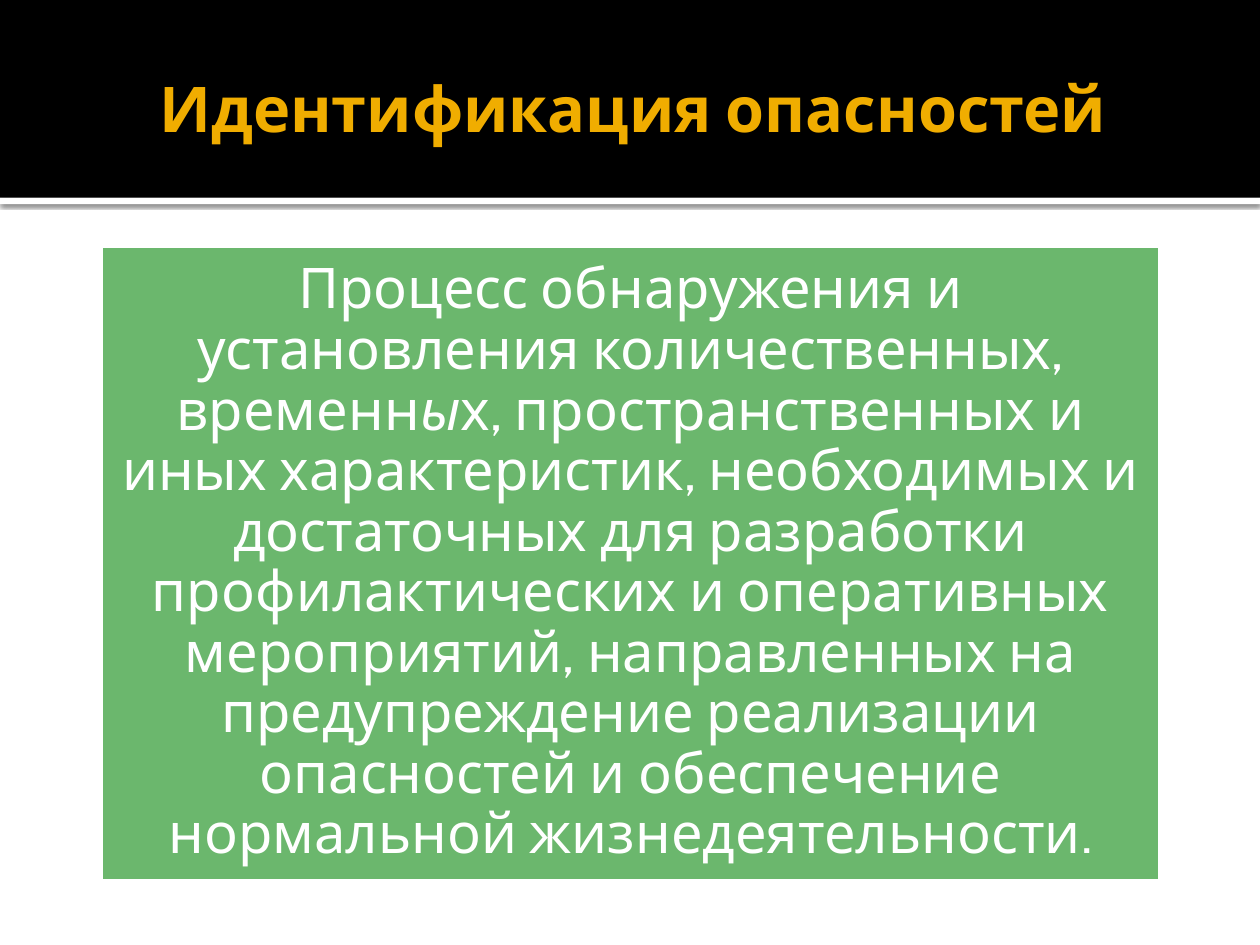
from lxml import etree
from pptx import Presentation
from pptx.dml.color import RGBColor
from pptx.enum import shapes, text
from pptx.oxml import ns
from pptx.util import Inches, Pt

COLORS = {"band": "000000", "white": "FFFFFF", "title": "F0AD00", "panel": "6BB76D"}
FONT = "Cabin"
SLIDE_WIDTH, SLIDE_HEIGHT = 10, 7.5
BAND_HEIGHT = 1.57
DEFINITION = [
    ("Процесс обнаружения и установления количественных, временн", False),
    ("ы", True),
    ("х, пространственных и иных характеристик, необходимых и достаточных "
     "для разработки профилактических и оперативных мероприятий, направленных "
     "на предупреждение реализации опасностей и обеспечение нормальной "
     "жизнедеятельности.", False),
]


def color(name):
    return RGBColor.from_string(COLORS[name])


def add_rectangle(slide, box, fill):
    rectangle = slide.shapes.add_shape(
        shapes.MSO_SHAPE.RECTANGLE, *[Inches(length) for length in box])
    rectangle.shadow.inherit = False
    rectangle.fill.solid()
    rectangle.fill.fore_color.rgb = color(fill)
    rectangle.line.fill.background()
    return rectangle


def add_soft_shadow(shape):
    """Drop a blurred black shadow straight down from the shape."""
    effects = shape._element.spPr.find(ns.qn("a:effectLst"))
    shadow = etree.SubElement(
        effects, ns.qn("a:outerShdw"), blurRad=str(Pt(2.5)), dist=str(Pt(0.8)),
        dir="5400000", algn="tl", rotWithShape="0")
    black = etree.SubElement(shadow, ns.qn("a:srgbClr"), val=COLORS["band"])
    etree.SubElement(black, ns.qn("a:alpha"), val="60000")


def write_centered(shape, runs, size, font_color, margins, bold=False):
    """Fill the shape with one centred paragraph of (wording, italic) runs."""
    frame = shape.text_frame
    frame.word_wrap = True
    frame.vertical_anchor = text.MSO_ANCHOR.MIDDLE
    (frame.margin_left, frame.margin_top,
     frame.margin_right, frame.margin_bottom) = [Inches(m) for m in margins]
    paragraph = frame.paragraphs[0]
    paragraph.alignment = text.PP_ALIGN.CENTER
    for wording, italic in runs:
        run = paragraph.add_run()
        run.text = wording
        run.font.name = FONT
        run.font.size = Pt(size)
        run.font.bold = bold
        run.font.italic = italic
        run.font.color.rgb = color(font_color)
    return paragraph


def add_header(slide):
    strip = add_rectangle(slide, (0, BAND_HEIGHT, SLIDE_WIDTH, 0.05), "white")
    add_soft_shadow(strip)
    add_rectangle(slide, (0, 0, SLIDE_WIDTH, BAND_HEIGHT), "band")
    title = slide.shapes.add_textbox(
        Inches(0.5), Inches(0.17), Inches(9), Inches(1.37))
    write_centered(title, [("Идентификация опасностей", False)], 36, "title",
                   (0.1, 0.05, 0.05, 0.05), bold=True)


def add_definition(slide):
    panel = add_rectangle(slide, (0.79, 1.94, 8.43, 5.06), "panel")
    panel.line.color.rgb = color("white")
    panel.line.width = Pt(3.78)
    paragraph = write_centered(panel, DEFINITION, 32, "white", [0.13] * 4)
    paragraph.line_spacing = 0.9


def main():
    presentation = Presentation()
    presentation.slide_width = Inches(SLIDE_WIDTH)
    presentation.slide_height = Inches(SLIDE_HEIGHT)
    slide = presentation.slides.add_slide(presentation.slide_layouts[6])
    add_header(slide)
    add_definition(slide)
    presentation.save("out.pptx")


if __name__ == "__main__":
    main()
